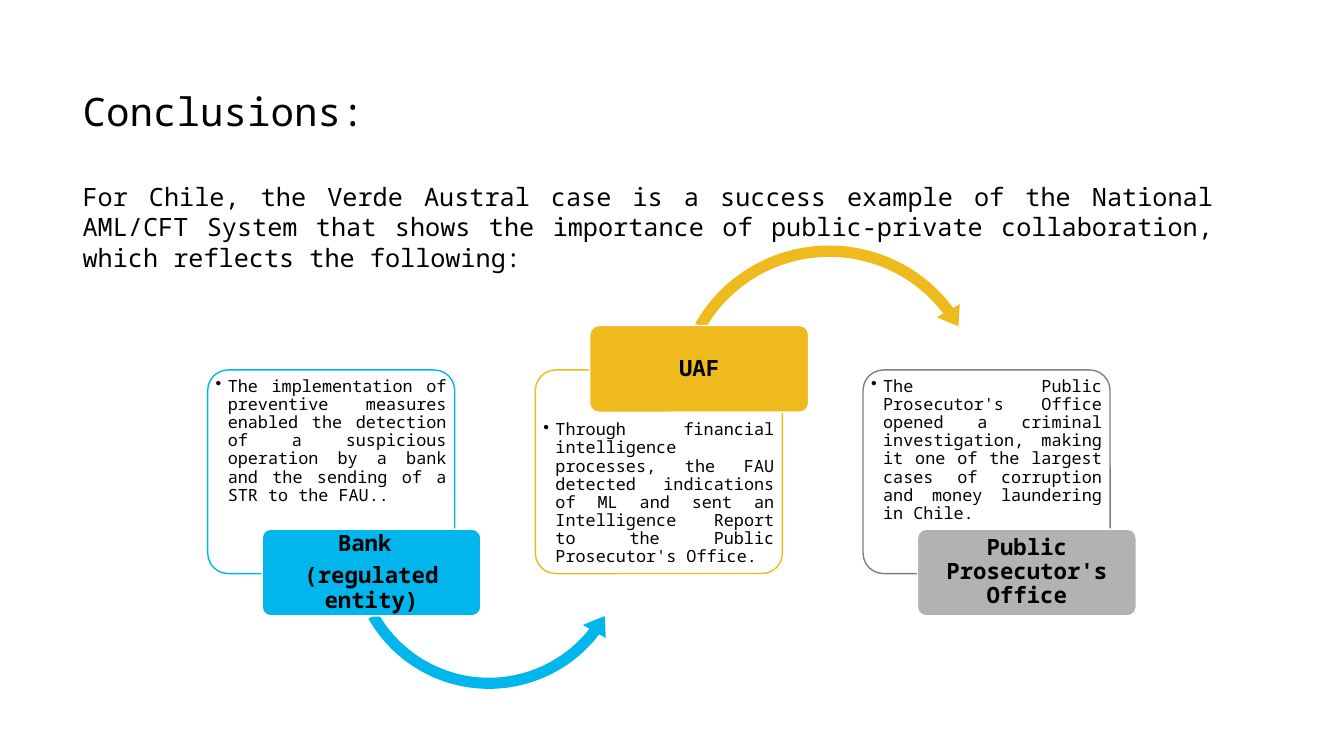
import pptx
import pptx.dml.color
import pptx.enum.shapes
import pptx.enum.text
import pptx.oxml
import pptx.oxml.ns
import pptx.util
from pptx.util import Inches

FONT = "Noto Sans Mono"
COLORS = {
    "text": "000000",
    "paper": "FFFFFF",
    "bank": "00B6ED",
    "uaf": "EFBA1D",
    "prosecutor": "B2B2B2",
    "prosecutor_edge": "7F7F7F",
}
ALIGN = pptx.enum.text.PP_ALIGN
ANCHOR = pptx.enum.text.MSO_ANCHOR
SHAPE = pptx.enum.shapes.MSO_SHAPE

FIRST_LEFT = 2.06
COLUMN_STEP = 3.25
CARD_TOP = 3.67
LABEL_SHIFT = 0.54
LABEL_LOW = 5.25
LABEL_HIGH = 3.23


def rgb(name):
    return pptx.dml.color.RGBColor.from_string(COLORS[name])


def set_frame(frame, anchor, insets):
    frame.word_wrap = True
    frame.auto_size = pptx.enum.text.MSO_AUTO_SIZE.NONE
    frame.vertical_anchor = anchor
    frame.margin_left, frame.margin_top, frame.margin_right, frame.margin_bottom = (
        Inches(inset) for inset in insets
    )


def write(para, text, size, align, spacing=1.0, after=0, bold=False):
    para.alignment = align
    para.line_spacing = spacing
    para.space_after = pptx.util.Pt(after)
    span = para.add_run()
    span.text = text
    span.font.name = FONT
    span.font.size = pptx.util.Pt(size)
    span.font.bold = bold
    span.font.color.rgb = rgb("text")


def add_bullet(para, indent):
    properties = para._p.get_or_add_pPr()
    properties.set("marL", str(Inches(indent)))
    properties.set("indent", str(-Inches(indent)))
    bullet = pptx.oxml.parse_xml(
        f'<a:buChar {pptx.oxml.ns.nsdecls("a")} char="•"/>'
    )
    properties.append(bullet)


def add_shape(page, kind, box, fill, line=None, adjustments=()):
    shape = page.shapes.add_shape(kind, *(Inches(length) for length in box))
    shape.shadow.inherit = False
    shape.fill.solid()
    shape.fill.fore_color.rgb = rgb(fill)
    if line:
        shape.line.color.rgb = rgb(line)
        shape.line.width = pptx.util.Pt(1)
    else:
        shape.line.fill.background()
    for index, value in enumerate(adjustments):
        shape.adjustments[index] = value
    return shape


def set_opacity(shape, percent):
    color = shape.fill._xPr.find(".//" + pptx.oxml.ns.qn("a:srgbClr"))
    color.append(
        pptx.oxml.parse_xml(
            f'<a:alpha {pptx.oxml.ns.nsdecls("a")} val="{percent * 1000}"/>'
        )
    )


def add_title(page, text):
    title = page.shapes.title
    title.left, title.top = Inches(0.72), Inches(0.55)
    title.width, title.height = Inches(9.83), Inches(1.16)
    set_frame(title.text_frame, ANCHOR.MIDDLE, (0.1, 0.05, 0.1, 0.05))
    write(title.text_frame.paragraphs[0], text, 28, ALIGN.LEFT, 0.9)


def add_intro(page, text):
    box = page.shapes.add_textbox(
        Inches(0.72), Inches(1.75), Inches(11.41), Inches(1)
    )
    set_frame(box.text_frame, ANCHOR.TOP, (0.1, 0.05, 0.1, 0.05))
    write(box.text_frame.paragraphs[0], text, 18, ALIGN.JUSTIFY)


def add_card(page, left, text, edge, top_inset):
    card = add_shape(
        page, SHAPE.ROUNDED_RECTANGLE, (left, CARD_TOP, 2.45, 2.02),
        "paper", edge, (0.1,),
    )
    set_opacity(card, 90)
    set_frame(card.text_frame, ANCHOR.TOP, (0.02, top_inset, 0.02, 0.02))
    para = card.text_frame.paragraphs[0]
    add_bullet(para, 0.12)
    write(para, text, 12, ALIGN.JUSTIFY, 0.9, 2)


def add_label(page, left, top, lines, fill):
    label = add_shape(
        page, SHAPE.ROUNDED_RECTANGLE, (left, top, 2.17, 0.86),
        fill, "paper", (0.1,),
    )
    frame = label.text_frame
    set_frame(frame, ANCHOR.MIDDLE, (0.03, 0.02, 0.03, 0.02))
    for index, text in enumerate(lines):
        para = frame.add_paragraph() if index else frame.paragraphs[0]
        write(para, text, 16, ALIGN.CENTER, 0.9, 6, True)


def main():
    deck = pptx.Presentation()
    deck.slide_width, deck.slide_height = Inches(13.33), Inches(7.5)
    page = deck.slides.add_slide(deck.slide_layouts[5])

    add_title(page, "Conclusions:")
    add_intro(
        page,
        "For Chile, the Verde Austral case is a success example of the National "
        "AML/CFT System that shows the importance of public-private collaboration, "
        "which reflects the following:",
    )

    bank_arrow = (
        SHAPE.LEFT_CIRCULAR_ARROW, (3.4, 4.01, 2.9, 2.9), "bank", None,
        (0.038, 4.815, 22.57, 90.245, 0.045),
    )
    uaf_arrow = (
        SHAPE.CIRCULAR_ARROW, (6.62, 2.36, 3.21, 3.21), "uaf", None,
        (0.035, 4.308, 193.937, 125.755, 0.041),
    )
    steps = [
        (
            "The implementation of preventive measures enabled the detection of a "
            "suspicious operation by a bank and the sending of a STR to the FAU..",
            ["Bank ", "(regulated entity)"], "bank", "bank", LABEL_LOW, bank_arrow,
        ),
        (
            "Through financial intelligence processes, the FAU detected indications "
            "of ML and sent an Intelligence Report to the Public Prosecutor's Office.",
            ["UAF"], "uaf", "uaf", LABEL_HIGH, uaf_arrow,
        ),
        (
            "The Public Prosecutor's Office opened a criminal investigation, making "
            "it one of the largest cases of corruption and money laundering in Chile.",
            ["Public Prosecutor's Office"], "prosecutor", "prosecutor_edge",
            LABEL_LOW, None,
        ),
    ]
    for index, (text, lines, fill, edge, label_top, arrow) in enumerate(steps):
        left = FIRST_LEFT + index * COLUMN_STEP
        top_inset = 0.45 if label_top == LABEL_HIGH else 0.02
        add_card(page, left, text, edge, top_inset)
        if arrow:
            add_shape(page, *arrow)
        add_label(page, left + LABEL_SHIFT, label_top, lines, fill)

    deck.save("out.pptx")


if __name__ == "__main__":
    main()
